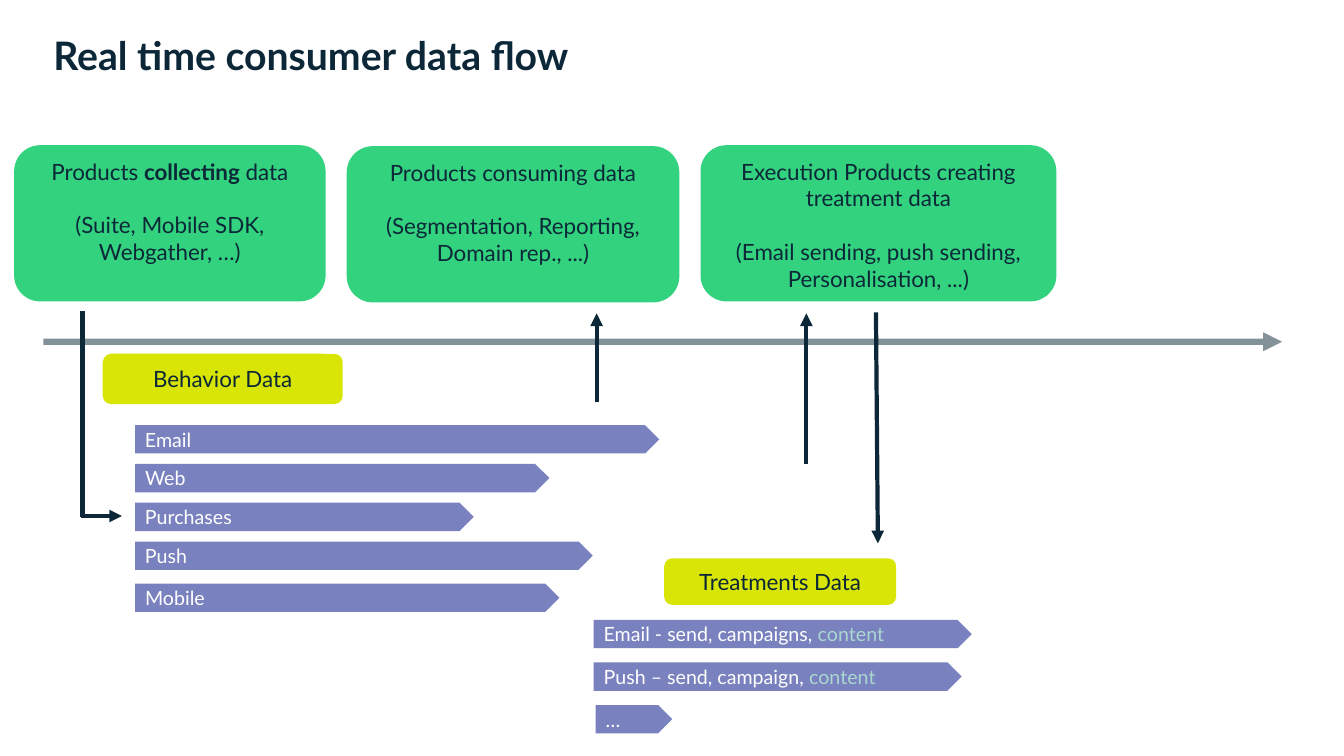
from lxml import etree
from pptx import Presentation
from pptx.dml.color import RGBColor
from pptx.enum.shapes import MSO_CONNECTOR, MSO_SHAPE
from pptx.enum.text import MSO_ANCHOR, PP_ALIGN
from pptx.oxml.ns import qn
from pptx.util import Pt

ROUND, PLATE = MSO_SHAPE.ROUNDED_RECTANGLE, MSO_SHAPE.PENTAGON
TOP, MID = MSO_ANCHOR.TOP, MSO_ANCHOR.MIDDLE
LEFT, MIDDLE = PP_ALIGN.LEFT, PP_ALIGN.CENTER
LINE = MSO_CONNECTOR.STRAIGHT
HEX = {"ink": "0C2838", "green": "32D27E", "lime": "D9E504",
       "violet": "7981BE", "white": "FFFFFF", "mint": "ABD7D1"}
RGB = {name: RGBColor.from_string(code) for name, code in HEX.items()}
KINDS = {
    "card": {"form": ROUND, "fill": "green", "anchor": TOP, "align": MIDDLE, "size": 16, "ink": "ink"},
    "label": {"form": ROUND, "fill": "lime", "anchor": MID, "align": MIDDLE, "size": 16, "ink": "ink"},
    "bar": {"form": PLATE, "fill": "violet", "anchor": MID, "align": LEFT, "size": 14, "ink": "white"},
}

deck = Presentation()
deck.slide_width, deck.slide_height = Pt(960), Pt(540)
slide = deck.slides.add_slide(deck.slide_layouts[6])


def write(para, runs, size, ink):
    for text, style in runs:
        run = para.add_run()
        run.text = text
        font = {"name": "Lato", "size": Pt(size), "bold": False, **style}
        run.font.color.rgb = RGB[font.pop("ink", ink)]
        for key, value in font.items():
            setattr(run.font, key, value)


def add_box(kind, place, paras):
    look = KINDS[kind]
    box = slide.shapes.add_shape(look["form"], *map(Pt, place))
    box.shadow.inherit = False
    box.fill.solid()
    box.fill.fore_color.rgb = RGB[look["fill"]]
    box.line.fill.background()
    frame = box.text_frame
    frame.word_wrap = True
    frame.vertical_anchor = look["anchor"]
    for i, runs in enumerate(paras):
        para = frame.add_paragraph() if i else frame.paragraphs[0]
        para.alignment = look["align"]
        if i:
            para.space_before = Pt(19.2)
        write(para, runs, look["size"], look["ink"])


title = slide.shapes.add_textbox(Pt(31), Pt(18.7), Pt(902), Pt(41)).text_frame
title.word_wrap = True
write(title.paragraphs[0], [("Real time consumer data flow", {"bold": True})], 28, "ink")

cards = [
    (10.1, 103.7, 222.5, [("Products ", {}), ("collecting", {"bold": True}), (" data", {})],
     "(Suite, Mobile SDK, Webgather, …)"),
    (247.7, 104.4, 237.6, [("Products consuming data", {})],
     "(Segmentation, Reporting, Domain rep., ...)"),
    (500.4, 103.7, 254.2, [("Execution Products creating treatment data", {})],
     "(Email sending, push sending, Personalisation, ...)"),
]
for left, top, width, head, tools in cards:
    add_box("card", (left, top, width, 111.6), [head, [(tools, {})]])

links = [
    ((31, 244.1), (915.8, 244.1), 4.5, True, 51),
    ((426.2, 287.3), (426.2, 223.9), 3, True, 100),
    ((57.6, 368.6), (87.1, 368.6), 3, True, 100),
    ((59, 222.5), (59, 369.4), 3, False, 100),
    ((625.7, 223.2), (627.1, 388.1), 3, True, 100),
    ((576, 331.2), (576, 223.9), 3, True, 100),
]
for start, end, weight, arrow, alpha in links:
    link = slide.shapes.add_connector(LINE, *map(Pt, start + end))
    link.line.width = Pt(weight)
    link.line.color.rgb = RGB["ink"]
    props = link.line._get_or_add_ln()
    if alpha < 100:
        tint = props.find(".//" + qn("a:srgbClr"))
        etree.SubElement(tint, qn("a:alpha"), val=str(alpha * 1000))
    if arrow:
        etree.SubElement(props, qn("a:tailEnd"), type="triangle")
    etree.SubElement(link._element.spPr, qn("a:effectLst"))

add_box("label", (73.4, 252.7, 171.4, 36), [[("Behavior Data", {})]])
add_box("label", (474.5, 398.9, 165.6, 33.1), [[("Treatments Data", {})]])

signals = [("Email", 303.7, 374.4), ("Web", 331.4, 295.9), ("Purchases", 359.1, 241.9),
           ("Push", 386.8, 326.9), ("Mobile", 416.9, 303.1)]
for name, top, width in signals:
    add_box("bar", (96.5, top, width, 20.2), [[(name, {})]])

content = ("content", {"ink": "mint"})
sends = [
    (424.1, 270, [("Email - send, campaigns, ", {}), content]),
    (424.1, 262.8, [("Push – send, campaign, ", {}), content]),
    (425.5, 54.7, [("…", {})]),
]
for i, (left, width, runs) in enumerate(sends):
    add_box("bar", (left, 442.8 + 30.4 * i, width, 20.2), [runs])

deck.save("out.pptx")
